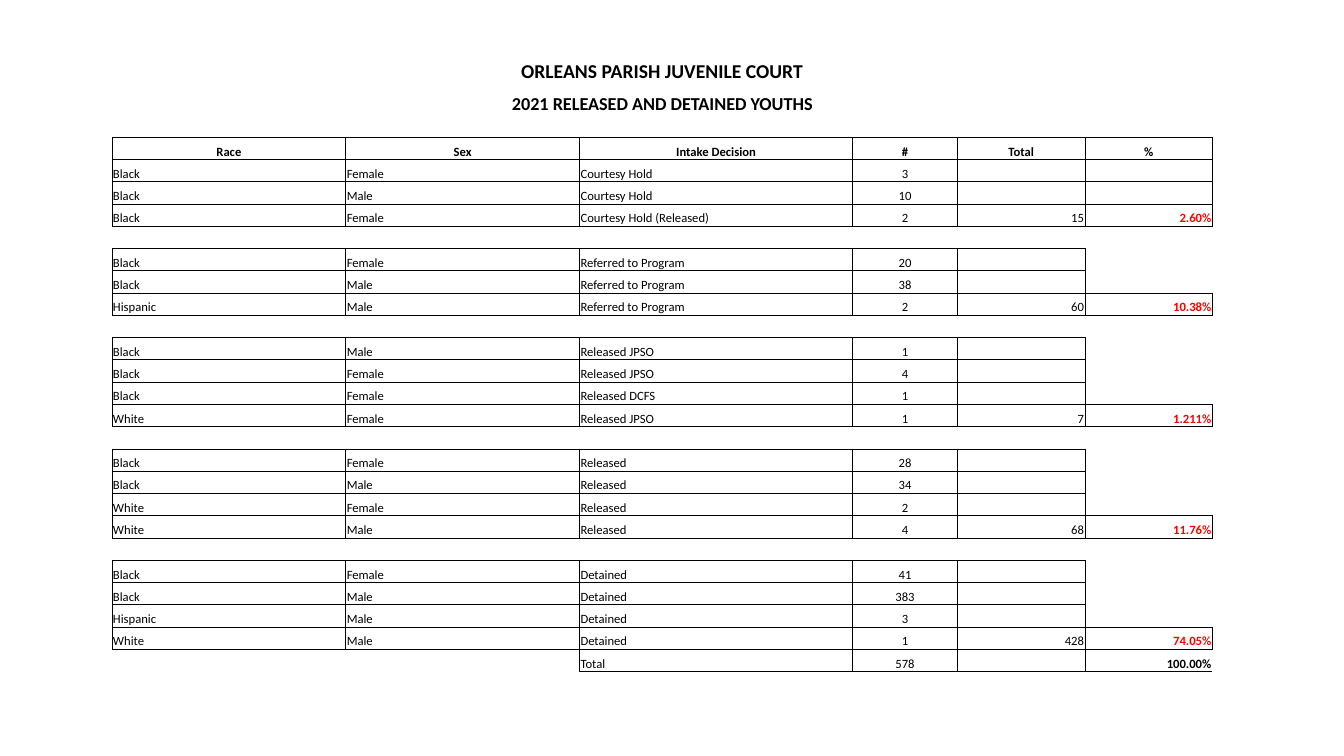
from lxml.etree import SubElement
from pptx import Presentation
from pptx.dml.color import RGBColor
from pptx.enum.text import MSO_ANCHOR, PP_ALIGN
from pptx.oxml.ns import qn
from pptx.util import Pt

HEADINGS = [("ORLEANS PARISH JUVENILE COURT", 14), ("2021 RELEASED AND DETAINED YOUTHS", 13)]
HEADER = ("Race", "Sex", "Intake Decision", "#", "Total", "%")
GROUPS = [
    ([("Black", "Female", "Courtesy Hold", "3"),
      ("Black", "Male", "Courtesy Hold", "10"),
      ("Black", "Female", "Courtesy Hold (Released)", "2")], "15", "2.60%"),
    ([("Black", "Female", "Referred to Program", "20"),
      ("Black", "Male", "Referred to Program", "38"),
      ("Hispanic", "Male", "Referred to Program", "2")], "60", "10.38%"),
    ([("Black", "Male", "Released JPSO", "1"),
      ("Black", "Female", "Released JPSO", "4"),
      ("Black", "Female", "Released DCFS", "1"),
      ("White", "Female", "Released JPSO", "1")], "7", "1.211%"),
    ([("Black", "Female", "Released", "28"),
      ("Black", "Male", "Released", "34"),
      ("White", "Female", "Released", "2"),
      ("White", "Male", "Released", "4")], "68", "11.76%"),
    ([("Black", "Female", "Detained", "41"),
      ("Black", "Male", "Detained", "383"),
      ("Hispanic", "Male", "Detained", "3"),
      ("White", "Male", "Detained", "1")], "428", "74.05%"),
]
GRAND_TOTAL = ("", "", "Total", "578", "", "100.00%")

COLORS = {"ink": "000000", "share": "FF0000"}
FONT = "Calibri"
NO_STYLE = "{2D5ABB26-0587-4C30-8999-92F81FD0307C}"
LEFT, TOP = 80, 35.3
COLUMN_WIDTHS = [167, 167, 195, 75, 91, 91]
HEADING_HEIGHTS = [24.5, 22.3]
ROW_HEIGHT = 15.92
ALIGNMENTS = [PP_ALIGN.LEFT] * 3 + [PP_ALIGN.CENTER] + [PP_ALIGN.RIGHT] * 2
COLUMNS = len(HEADER)
BLANK = ("",) * COLUMNS
SIDES = {"L": (0, -1), "R": (0, 1), "T": (-1, 0), "B": (1, 0)}


def write(cell, text, size=9, bold=False, color="ink", align=PP_ALIGN.LEFT):
    cell.margin_left = cell.margin_right = cell.margin_top = Pt(0.72)
    cell.margin_bottom = 0
    cell.vertical_anchor = MSO_ANCHOR.BOTTOM
    paragraph = cell.text_frame.paragraphs[0]
    paragraph.alignment = align
    if not text:
        SubElement(paragraph._p, qn("a:endParaRPr"), sz=str(size * 100))
        return
    run = paragraph.add_run()
    run.text = text
    run.font.name, run.font.size, run.font.bold = FONT, Pt(size), bold
    run.font.color.rgb = RGBColor.from_string(COLORS[color])


def draw_borders(cell, widths):
    properties = cell._tc.get_or_add_tcPr()
    for side, width in widths.items():
        line = SubElement(properties, qn(f"a:ln{side}"), w=str(Pt(width)))
        if width:
            fill = SubElement(line, qn("a:solidFill"))
            SubElement(fill, qn("a:srgbClr"), val=COLORS["ink"])
        else:
            SubElement(line, qn("a:noFill"))
    cell.fill.background()


def lay_out_rows():
    rows = [BLANK] * (len(HEADINGS) + 1) + [HEADER]
    boxed_columns = [()] * (len(HEADINGS) + 1) + [range(COLUMNS)]
    for index, (entries, total, share) in enumerate(GROUPS):
        if index:
            rows.append(BLANK)
            boxed_columns.append(())
        for entry in entries:
            last = entry is entries[-1]
            rows.append(entry + ((total, share) if last else ("", "")))
            boxed_columns.append(range(COLUMNS if last or index == 0 else COLUMNS - 1))
    rows += [GRAND_TOTAL, BLANK]
    boxed_columns += [range(2, COLUMNS), ()]
    boxed = {(r, c) for r, columns in enumerate(boxed_columns) for c in columns}
    return rows, boxed


def main():
    presentation = Presentation()
    presentation.slide_width, presentation.slide_height = Pt(960), Pt(540)
    slide = presentation.slides.add_slide(presentation.slide_layouts[6])

    rows, boxed = lay_out_rows()
    header_row = len(HEADINGS) + 1
    total_row = len(rows) - 2
    heights = HEADING_HEIGHTS + [ROW_HEIGHT] * (len(rows) - len(HEADINGS))
    table = slide.shapes.add_table(
        len(rows), COLUMNS, Pt(LEFT), Pt(TOP), Pt(sum(COLUMN_WIDTHS)), Pt(sum(heights))).table
    table.first_row = table.horz_banding = False
    table._tbl.tblPr.find(qn("a:tableStyleId")).text = NO_STYLE
    for column, width in zip(table.columns, COLUMN_WIDTHS):
        column.width = Pt(width)
    for row, height in zip(table.rows, heights):
        row.height = Pt(height)

    def border(r, c, side):
        down, across = SIDES[side]
        if (r, c, side) == (total_row, COLUMNS - 1, "R"):
            return 0
        if not {(r, c), (r + down, c + across)} & boxed:
            return 0
        return 1 if (r, side) in ((total_row, "B"), (total_row + 1, "T")) else 0.5

    for r, texts in enumerate(rows):
        for c, text in enumerate(texts):
            cell = table.cell(r, c)
            draw_borders(cell, {side: border(r, c, side) for side in SIDES})
            if r < len(HEADINGS) and c == 0:
                heading, size = HEADINGS[r]
                cell.merge(table.cell(r, COLUMNS - 1))
                write(cell, heading, size=size, bold=True, align=PP_ALIGN.CENTER)
                continue
            is_header, is_share = r == header_row, c == COLUMNS - 1
            write(cell, text, bold=is_header or is_share,
                  color="share" if is_share and header_row < r < total_row else "ink",
                  align=PP_ALIGN.CENTER if is_header else ALIGNMENTS[c])

    presentation.save("out.pptx")


if __name__ == "__main__":
    main()
